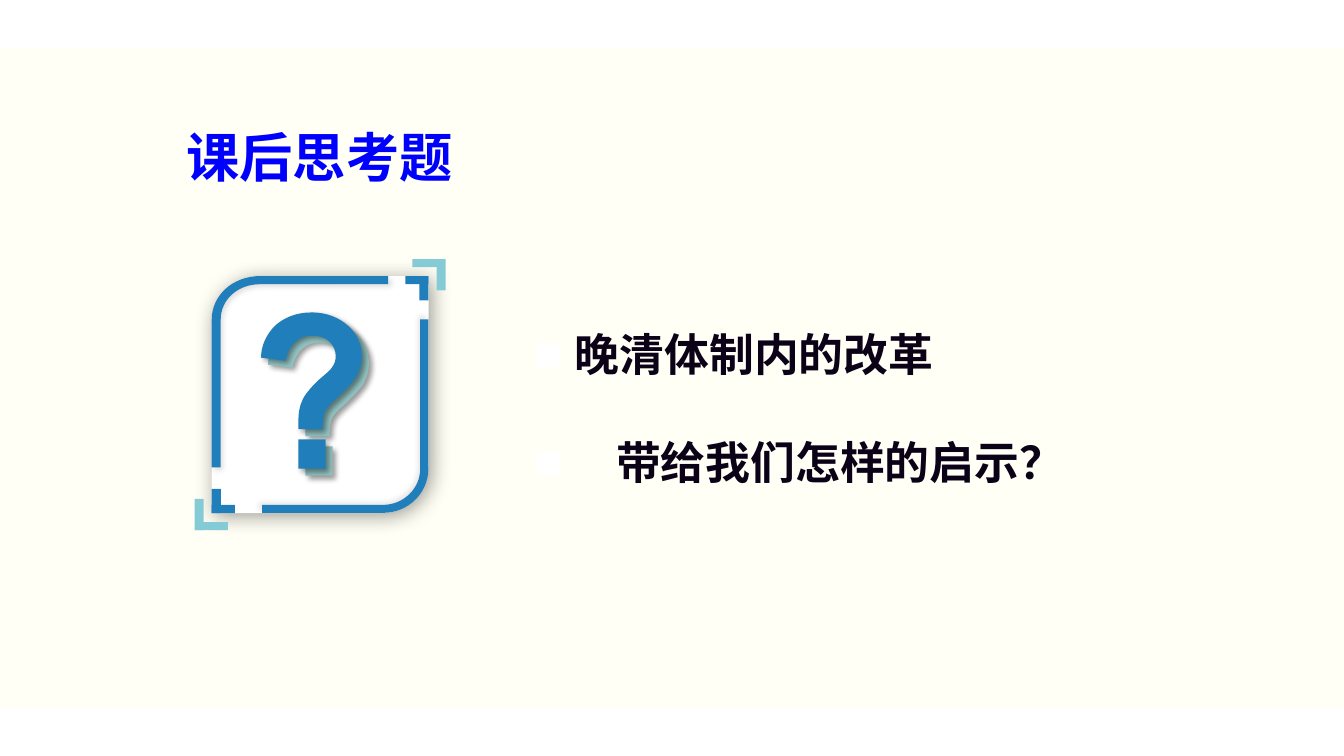
from lxml.etree import SubElement
from pptx import Presentation
from pptx.dml.color import RGBColor
from pptx.enum.shapes import MSO_SHAPE
from pptx.enum.text import MSO_ANCHOR, MSO_AUTO_SIZE, PP_ALIGN
from pptx.oxml.ns import qn
from pptx.util import Inches, Pt

FONT = "Noto Sans CJK SC"
COLORS = {
    "band": "FFFFF5",
    "white": "FFFFFF",
    "frame": "207FBA",
    "bracket": "85CBD6",
    "echo": "91C3C2",
    "title": "0000FF",
    "body": "0C0218",
    "shadow": "000000",
}

# Outlines in inches: a pair is a straight line's end, six numbers are a cubic curve
QUESTION_DOT = [(2.96, 4.36), (3.23, 4.36), (3.23, 4.65), (2.96, 4.65)]
QUESTION_HOOK = [
    (3.09, 3.1), (3.24, 3.1, 3.36, 3.15, 3.45, 3.23),
    (3.55, 3.32, 3.59, 3.43, 3.59, 3.54), (3.59, 3.61, 3.57, 3.67, 3.54, 3.73),
    (3.51, 3.78, 3.44, 3.86, 3.33, 3.96), (3.27, 4.01, 3.23, 4.06, 3.22, 4.09),
    (3.21, 4.12, 3.2, 4.18, 3.2, 4.26), (2.96, 4.26),
    (2.96, 4.22, 2.96, 4.19, 2.96, 4.19), (2.96, 4.1, 2.97, 4.03, 3, 3.97),
    (3.02, 3.92, 3.08, 3.85, 3.15, 3.78), (3.23, 3.71, 3.28, 3.67, 3.29, 3.65),
    (3.32, 3.61, 3.33, 3.58, 3.33, 3.53), (3.33, 3.48, 3.31, 3.43, 3.27, 3.39),
    (3.23, 3.35, 3.17, 3.33, 3.1, 3.33), (3.03, 3.33, 2.97, 3.35, 2.93, 3.39),
    (2.88, 3.43, 2.85, 3.5, 2.83, 3.58), (2.59, 3.55),
    (2.59, 3.43, 2.64, 3.32, 2.73, 3.23), (2.82, 3.15, 2.94, 3.1, 3.09, 3.1),
]
LOWER_ARM = [
    (4.17, 4.65), (4.17, 4.85, 4, 5.01, 3.8, 5.01), (2.6, 5.01), (2.6, 5.09),
    (3.8, 5.09), (4.05, 5.09, 4.25, 4.89, 4.25, 4.65), (4.25, 3.17), (4.17, 3.17),
]
UPPER_ARM = [
    (2.19, 3.17), (2.19, 2.97, 2.36, 2.82, 2.58, 2.82), (3.85, 2.82), (3.85, 2.74),
    (2.58, 2.74), (2.31, 2.74, 2.1, 2.93, 2.1, 3.17), (2.1, 4.64), (2.19, 4.64),
]
# Bars of the top right corner: color, left, top, width, height
CORNER_BARS = [
    ("frame", 4.16, 2.74, 0.09, 0.24),
    ("frame", 4.02, 2.74, 0.23, 0.08),
    ("bracket", 4.33, 2.57, 0.09, 0.31),
    ("bracket", 4.09, 2.57, 0.32, 0.08),
]
CARD = (2.1, 2.74, 2.15, 2.35)


def paint(shape, color):
    shape.shadow.inherit = False
    shape.fill.solid()
    shape.fill.fore_color.rgb = RGBColor.from_string(COLORS[color])
    shape.line.fill.background()


def add_block(slide, kind, color, left, top, width, height):
    block = slide.shapes.add_shape(
        kind, Inches(left), Inches(top), Inches(width), Inches(height))
    paint(block, color)
    return block


def cast_shadow(shape, opacity, blur, angle=45):
    effects = shape.element.spPr.find(qn("a:effectLst"))
    shadow = SubElement(effects, qn("a:outerShdw"), blurRad=str(Pt(blur)),
                        dist=str(Pt(3)), dir=str(angle * 60000), rotWithShape="0")
    color = SubElement(shadow, qn("a:srgbClr"), val=COLORS["shadow"])
    SubElement(color, qn("a:alpha"), val=str(opacity * 1000))


def bend_lines(shape, segments, left, top):
    """Swap the straight lines of a freeform for cubic curves where asked."""
    lines = list(shape.element.iter(qn("a:lnTo")))
    for line, segment in zip(lines, segments):
        if len(segment) == 2:
            continue
        parent = line.getparent()
        curve = SubElement(parent, qn("a:cubicBezTo"))
        for x, y in zip(segment[::2], segment[1::2]):
            SubElement(curve, qn("a:pt"), x=str(round((x - left) * 1000)),
                       y=str(round((y - top) * 1000)))
        parent.replace(line, curve)


def add_outline(slide, outlines, color, shift=0.0):
    """Draw closed outlines, measured in thousandths of an inch."""
    contours = [[tuple(value + shift for value in segment) for segment in outline]
                for outline in outlines]
    ends = [[(segment[-2] * 1000, segment[-1] * 1000) for segment in contour]
            for contour in contours]
    builder = slide.shapes.build_freeform(*ends[0][0], scale=Inches(0.001))
    builder.add_line_segments(ends[0][1:], close=True)
    for points in ends[1:]:
        builder.move_to(*points[0])
        builder.add_line_segments(points[1:], close=True)
    shape = builder.convert_to_shape()
    segments = [segment for contour in contours for segment in contour[1:]]
    bend_lines(shape, segments, shape.left.inches, shape.top.inches)
    paint(shape, color)
    return shape


def place(box, left, top, width, height):
    box.left, box.top = Inches(left), Inches(top)
    box.width, box.height = Inches(width), Inches(height)


def set_font(para, size, color):
    font = para.font
    font.name, font.size, font.bold = FONT, Pt(size), True
    font.color.rgb = RGBColor.from_string(COLORS[color])
    properties = para._p.pPr.find(qn("a:defRPr"))
    SubElement(properties, qn("a:ea"), typeface=FONT)


def set_bullet(para, indent):
    properties = para._p.get_or_add_pPr()
    properties.set("marL", str(Inches(indent)))
    properties.set("indent", str(-Inches(indent)))
    color = SubElement(properties, qn("a:buClr"))
    SubElement(color, qn("a:srgbClr"), val=COLORS["white"])
    SubElement(properties, qn("a:buSzPct"), val="110000")
    SubElement(properties, qn("a:buChar"), char="■")


def add_band(slide):
    band = add_block(slide, MSO_SHAPE.RECTANGLE, "band", 0, 0.47, 13.33, 6.56)
    slide.shapes.element.insert(2, band.element)


def add_title(slide):
    title = slide.shapes.title
    place(title, 1.75, 1.18, 2.87, 0.74)
    frame = title.text_frame
    frame.text = "课后思考题"
    frame.word_wrap = False
    frame.auto_size = MSO_AUTO_SIZE.NONE
    frame.vertical_anchor = MSO_ANCHOR.MIDDLE
    para = frame.paragraphs[0]
    para.alignment = PP_ALIGN.LEFT
    set_font(para, 38, "title")


def add_questions(slide):
    body = slide.placeholders[1]
    place(body, 5.2, 2.66, 6.2, 3.14)
    frame = body.text_frame
    frame.text = "晚清体制内的改革\n带给我们怎样的启示？"
    frame.auto_size = MSO_AUTO_SIZE.NONE
    for para, indent in zip(frame.paragraphs, (0.4, 0.81)):
        set_bullet(para, indent)
        para.alignment = PP_ALIGN.JUSTIFY
        para.line_spacing = 2.0
        para.space_before = Pt(0)
        set_font(para, 32, "body")


def add_question_card(slide):
    left, top, width, height = CARD
    card = add_block(slide, MSO_SHAPE.ROUND_2_DIAG_RECTANGLE, "white", *CARD)
    card.adjustments[0], card.adjustments[1] = 0.215, 0
    cast_shadow(card, 40, 15)

    # Question mark behind, frame arms, corner bars, question mark in front
    mark = [QUESTION_DOT, QUESTION_HOOK]
    cast_shadow(add_outline(slide, mark, "echo", shift=0.07), 40, 4)
    cast_shadow(add_outline(slide, [LOWER_ARM], "frame"), 9, 4, angle=225)
    cast_shadow(add_outline(slide, [UPPER_ARM], "frame"), 13, 4)
    for color, x, y, w, h in CORNER_BARS:
        opposite = (2 * left + width - x - w, 2 * top + height - y - h)
        for corner in ((x, y), opposite):
            add_block(slide, MSO_SHAPE.RECTANGLE, color, *corner, w, h)
    cast_shadow(add_outline(slide, mark, "frame"), 40, 4)


def main():
    deck = Presentation()
    deck.slide_width, deck.slide_height = Inches(13.33), Inches(7.5)
    slide = deck.slides.add_slide(deck.slide_layouts[1])
    add_band(slide)
    add_title(slide)
    add_questions(slide)
    add_question_card(slide)
    deck.save("out.pptx")


if __name__ == "__main__":
    main()
